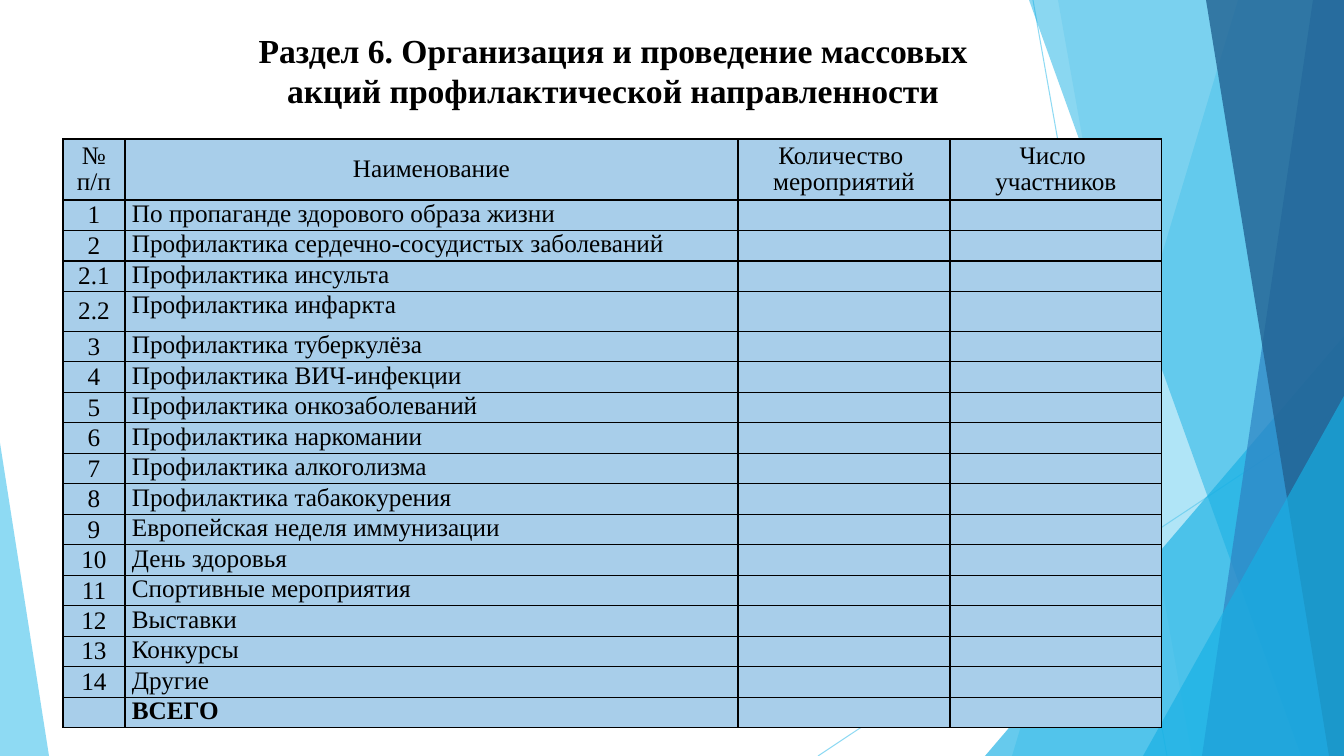
import pptx
import pptx.dml.color
import pptx.enum.shapes
import pptx.enum.text
import pptx.oxml
import pptx.oxml.ns
import pptx.util

TITLE = "Раздел 6. Организация и проведение массовых акций профилактической направленности"
HEADER = [["№", "п/п"], ["Наименование"], ["Количество ", "мероприятий"], ["Число ", "участников"]]
ACTIVITIES = [
    ("1", "По пропаганде здорового образа жизни"),
    ("2", "Профилактика сердечно-сосудистых заболеваний"),
    ("2.1", "Профилактика инсульта"),
    ("2.2", "Профилактика инфаркта"),
    ("3", "Профилактика туберкулёза"),
    ("4", "Профилактика ВИЧ-инфекции"),
    ("5", "Профилактика онкозаболеваний"),
    ("6", "Профилактика наркомании"),
    ("7", "Профилактика алкоголизма"),
    ("8", "Профилактика табакокурения"),
    ("9", "Европейская неделя иммунизации"),
    ("10", "День здоровья"),
    ("11", "Спортивные мероприятия"),
    ("12", "Выставки"),
    ("13", "Конкурсы"),
    ("14", "Другие"),
    ("", "ВСЕГО"),
]
COLORS = {"black": "000000", "cell": "A8CEEA", "sky": "5FCBEF", "cyan": "17B0E4",
          "blue": "2E83C3", "navy": "226292"}
FONT = "Times New Roman"

PX = 9071  # EMU in one px, 100.8 px to the inch
WIDTH, HEIGHT = 1344, 756
TITLE_BOX = (216, 24, 794, 92)
TABLE_LEFT, TABLE_TOP, TABLE_HEIGHT = 63, 139, 589
COLUMN_WIDTHS = [62, 613, 212, 212]
HEADER_HEIGHT, TALL_HEIGHT, TALL_NUMBER = 61, 40, "2.2"
CELL_INSET = 7
THIN_LINES = [(1033, 0, 1167, 756), (1344, 406, 818, 756)]
# band: x at the top and bottom of its left edge; triangle: left, top, width, height, apex
FACETS = [
    ("band", (1238, 1012), "sky", 36),
    ("band", (1058, 1192), "sky", 20),
    ("triangle", (985, 336, 359, 420, 1), "cyan", 66),
    ("band", (1029, 1301), "cyan", 50),
    ("band", (1313, 1202), "blue", 70),
    ("band", (1206, 1329), "navy", 80),
    ("triangle", (1143, 396, 201, 360, 1), "cyan", 66),
    ("triangle", (0, 443, 49, 313, 0), "sky", 70),
]


def px(*lengths):
    return [pptx.util.Emu(round(length * PX)) for length in lengths]


def rgb(name):
    return pptx.dml.color.RGBColor.from_string(COLORS[name])


def set_opacity(element, percent):
    color = element.find(".//" + pptx.oxml.ns.qn("a:srgbClr"))
    alpha = color.makeelement(pptx.oxml.ns.qn("a:alpha"), {"val": str(percent * 1000)})
    color.append(alpha)


def write(frame, lines, size=18, bold=False, centered=False, spacing=1.0):
    frame.word_wrap = True
    for index, line in enumerate(lines):
        paragraph = frame.add_paragraph() if index else frame.paragraphs[0]
        alignment = pptx.enum.text.PP_ALIGN
        paragraph.alignment = alignment.CENTER if centered else alignment.LEFT
        paragraph.line_spacing = spacing
        run = paragraph.add_run()
        run.text = line
        run.font.name, run.font.size, run.font.bold = FONT, pptx.util.Pt(size), bold
        run.font.color.rgb = rgb("black")


def add_thin_line(slide, ends):
    line = slide.shapes.add_connector(pptx.enum.shapes.MSO_CONNECTOR.STRAIGHT, *px(*ends))
    line.line.color.rgb = rgb("sky")
    line.line.width = pptx.util.Pt(0.75)
    properties = line.element.spPr
    set_opacity(properties, 70)
    properties.append(properties.makeelement(pptx.oxml.ns.qn("a:effectLst"), {}))


def add_facet(slide, kind, geometry, color, opacity):
    if kind == "band":
        top_x, bottom_x = geometry
        builder = slide.shapes.build_freeform(top_x, 0, scale=PX)
        builder.add_line_segments([(WIDTH, 0), (WIDTH, HEIGHT), (bottom_x, HEIGHT)])
        shape = builder.convert_to_shape()
    else:
        *box, apex = geometry
        triangle = pptx.enum.shapes.MSO_SHAPE.ISOSCELES_TRIANGLE
        shape = slide.shapes.add_shape(triangle, *px(*box))
        shape.adjustments[0] = apex
    shape.shadow.inherit = False
    shape.fill.solid()
    shape.fill.fore_color.rgb = rgb(color)
    shape.line.fill.background()
    set_opacity(shape.element.spPr, opacity)


def style_cell(cell, middle):
    side, none = px(CELL_INSET, 0)
    cell.margin_left = cell.margin_right = side
    cell.margin_top = cell.margin_bottom = none
    anchor = pptx.enum.text.MSO_ANCHOR
    cell.vertical_anchor = anchor.MIDDLE if middle else anchor.TOP
    properties = cell._tc.get_or_add_tcPr()
    for edge in ("lnL", "lnR", "lnT", "lnB"):
        properties.append(pptx.oxml.parse_xml(
            f'<a:{edge} {pptx.oxml.ns.nsdecls("a")} w="12700"><a:solidFill>'
            f'<a:srgbClr val="{COLORS["black"]}"/></a:solidFill></a:{edge}>'))
    cell.fill.solid()
    cell.fill.fore_color.rgb = rgb("cell")


def shrink_empty(cell):
    """Keep an empty cell from stretching its row."""
    paragraph = cell.text_frame.paragraphs[0]._p
    end = paragraph.makeelement(pptx.oxml.ns.qn("a:endParaRPr"), {"sz": "1200"})
    paragraph.append(end)


def add_activity_table(slide):
    rows = [HEADER] + [[[number], [name], [""], [""]] for number, name in ACTIVITIES]
    box = px(TABLE_LEFT, TABLE_TOP, sum(COLUMN_WIDTHS), TABLE_HEIGHT)
    table = slide.shapes.add_table(len(rows), len(COLUMN_WIDTHS), *box).table
    for column, width in zip(table.columns, px(*COLUMN_WIDTHS)):
        column.width = width
    regular = (TABLE_HEIGHT - HEADER_HEIGHT - TALL_HEIGHT) / (len(rows) - 2)
    for row_index, row in enumerate(rows):
        header = row_index == 0
        height = TALL_HEIGHT if row[0] == [TALL_NUMBER] else regular
        table.rows[row_index].height = px(HEADER_HEIGHT if header else height)[0]
        for column_index, lines in enumerate(row):
            cell = table.cell(row_index, column_index)
            centered = header or column_index == 0
            style_cell(cell, centered)
            if lines == [""]:
                shrink_empty(cell)
            else:
                write(cell.text_frame, lines, bold=row is rows[-1], centered=centered,
                      spacing=0.93 if header else 1.0)


def main():
    presentation = pptx.Presentation()
    presentation.slide_width, presentation.slide_height = px(WIDTH, HEIGHT)
    slide = presentation.slides.add_slide(presentation.slide_layouts[5])
    for ends in THIN_LINES:
        add_thin_line(slide, ends)
    for facet in FACETS:
        add_facet(slide, *facet)
    title = slide.shapes.title
    title.left, title.top, title.width, title.height = px(*TITLE_BOX)
    title.text_frame.vertical_anchor = pptx.enum.text.MSO_ANCHOR.MIDDLE
    write(title.text_frame, [TITLE], size=24, bold=True, centered=True)
    add_activity_table(slide)
    presentation.save("out.pptx")


if __name__ == "__main__":
    main()
